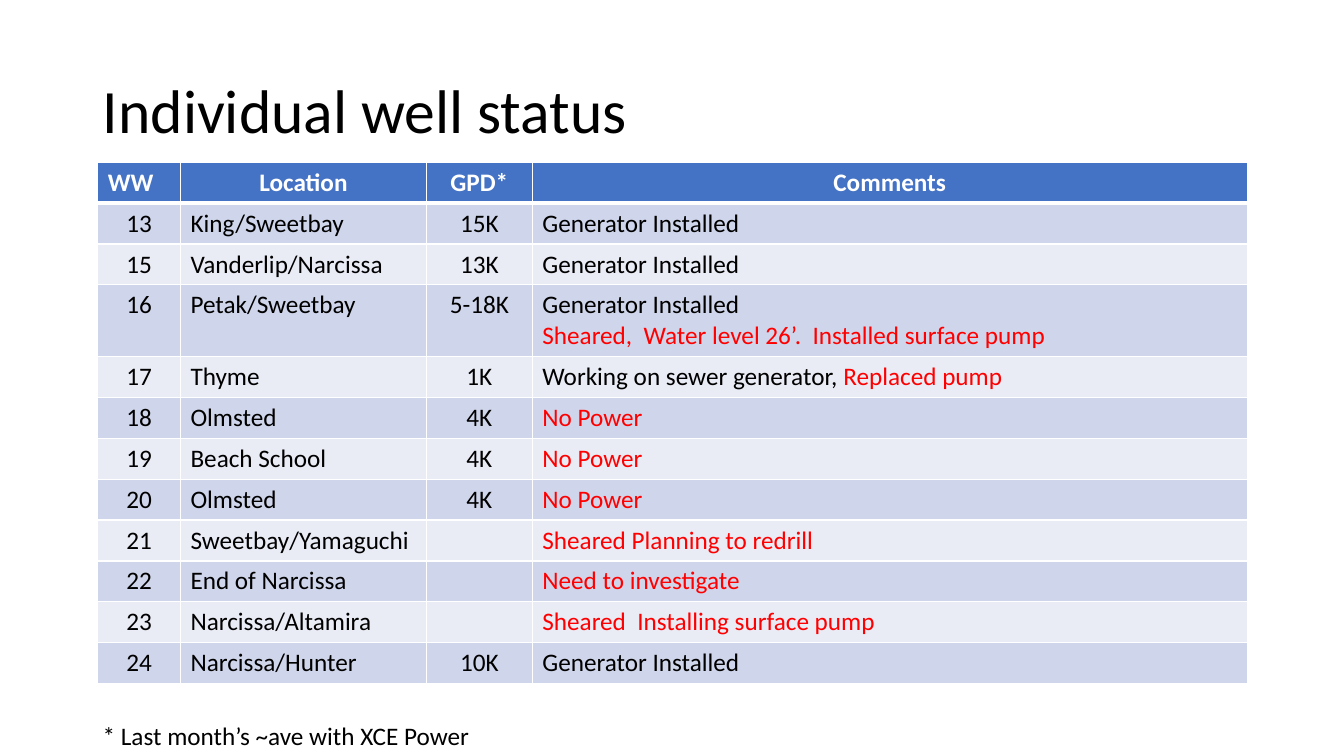
from dataclasses import dataclass

from lxml.etree import SubElement
from pptx import Presentation
from pptx.dml.color import RGBColor
from pptx.enum.text import MSO_ANCHOR as Anchor, MSO_AUTO_SIZE as AutoSize, PP_ALIGN as Align
from pptx.oxml.ns import qn
from pptx.slide import Slide
from pptx.table import _Cell as Cell
from pptx.text.text import TextFrame, _Paragraph as Paragraph
from pptx.util import Inches, Pt


@dataclass(frozen=True)
class Theme:
    font: str = "Calibri"
    title_size: int = 44
    body_size: int = 18
    text: str = "000000"
    alert: str = "FF0000"
    header_text: str = "FFFFFF"
    header_fill: str = "4472C4"
    bands: tuple[str, str] = ("CFD5EA", "E9EBF5")
    border: str = "FFFFFF"
    thin: int = 1
    thick: int = 3


@dataclass(frozen=True)
class Span:
    text: str
    color: str


@dataclass(frozen=True)
class Well:
    number: int
    location: str
    gallons: str
    comments: tuple[tuple[Span, ...], ...]


THEME = Theme()


def plain(text: str) -> Span:
    return Span(text, THEME.text)


def alert(text: str) -> Span:
    return Span(text, THEME.alert)


INSTALLED = (plain("Generator Installed"),)
NO_POWER = (alert("No Power"),)
HEADERS = ("WW", "Location", "GPD*", "Comments")
COLUMN_WIDTHS = (0.82, 2.44, 1.05, 7.09)
COLUMN_ALIGNS = (Align.CENTER, Align.LEFT, Align.CENTER, Align.LEFT)
HEADER_ALIGNS = (Align.LEFT, Align.CENTER, Align.CENTER, Align.CENTER)
LINE_HEIGHT = 0.3
CELL_PADDING = 0.1
WELLS = (
    Well(13, "King/Sweetbay", "15K", (INSTALLED,)),
    Well(15, "Vanderlip/Narcissa", "13K", (INSTALLED,)),
    Well(16, "Petak/Sweetbay", "5-18K",
         (INSTALLED, (alert("Sheared,  Water level 26’.  Installed surface pump"),))),
    Well(17, "Thyme", "1K",
         ((plain("Working on sewer generator, "), alert("Replaced pump")),)),
    Well(18, "Olmsted", "4K", (NO_POWER,)),
    Well(19, "Beach School", "4K", (NO_POWER,)),
    Well(20, "Olmsted", "4K", (NO_POWER,)),
    Well(21, "Sweetbay/Yamaguchi", "", ((alert("Sheared Planning to redrill"),),)),
    Well(22, "End of Narcissa", "", ((alert("Need to investigate"),),)),
    Well(23, "Narcissa/Altamira", "", ((alert("Sheared  Installing surface pump"),),)),
    Well(24, "Narcissa/Hunter", "10K", (INSTALLED,)),
)


def add_span(paragraph: Paragraph, span: Span, size: int, bold: bool = False) -> None:
    run = paragraph.add_run()
    run.text = span.text
    for name, value in {"name": THEME.font, "size": Pt(size), "bold": bold}.items():
        setattr(run.font, name, value)
    run.font.color.rgb = RGBColor.from_string(span.color)


def write_lines(frame: TextFrame, lines: tuple[tuple[Span, ...], ...], align: Align,
                bold: bool = False) -> None:
    for index, spans in enumerate(lines):
        paragraph = frame.add_paragraph() if index else frame.paragraphs[0]
        paragraph.alignment = align
        for span in spans:
            if span.text:
                add_span(paragraph, span, THEME.body_size, bold)


def style_cell(cell: Cell, fill: str, top: int, bottom: int) -> None:
    properties = cell._tc.get_or_add_tcPr()
    for side, width in {"L": THEME.thin, "R": THEME.thin, "T": top, "B": bottom}.items():
        line = SubElement(properties, qn(f"a:ln{side}"), w=str(Pt(width)))
        SubElement(SubElement(line, qn("a:solidFill")), qn("a:srgbClr"), val=THEME.border)
    cell.fill.solid()
    cell.fill.fore_color.rgb = RGBColor.from_string(fill)


def add_title(slide: Slide) -> None:
    title = slide.shapes.title
    place = {"left": 0.92, "top": 0.4, "width": 11.5, "height": 1.45}
    for name, value in place.items():
        setattr(title, name, Inches(value))
    frame = title.text_frame
    for name, value in {"vertical_anchor": Anchor.MIDDLE, "word_wrap": True,
                        "auto_size": AutoSize.NONE}.items():
        setattr(frame, name, value)
    paragraph = frame.paragraphs[0]
    for name, value in {"alignment": Align.LEFT, "line_spacing": 0.9}.items():
        setattr(paragraph, name, value)
    add_span(paragraph, plain("Individual well status"), THEME.title_size)


def add_well_table(slide: Slide) -> None:
    heights = [LINE_HEIGHT + CELL_PADDING]
    heights += [LINE_HEIGHT * len(well.comments) + CELL_PADDING for well in WELLS]
    table = slide.shapes.add_table(
        len(heights), len(HEADERS), Inches(0.97), Inches(1.61),
        Inches(sum(COLUMN_WIDTHS)), Inches(sum(heights))).table
    for column, width in zip(table.columns, COLUMN_WIDTHS):
        column.width = Inches(width)
    for row, height in zip(table.rows, heights):
        row.height = Inches(height)
    for column, header in enumerate(HEADERS):
        cell = table.cell(0, column)
        style_cell(cell, THEME.header_fill, THEME.thin, THEME.thick)
        write_lines(cell.text_frame, ((Span(header, THEME.header_text),),),
                    HEADER_ALIGNS[column], True)
    for index, well in enumerate(WELLS):
        labels = (str(well.number), well.location, well.gallons)
        contents = [((plain(label),),) for label in labels] + [well.comments]
        for column, lines in enumerate(contents):
            cell = table.cell(index + 1, column)
            top = THEME.thin if index else THEME.thick
            style_cell(cell, THEME.bands[index % 2], top, THEME.thin)
            write_lines(cell.text_frame, lines, COLUMN_ALIGNS[column])


def add_footnote(slide: Slide) -> None:
    box = slide.shapes.add_textbox(Inches(0.92), Inches(7.1), Inches(3.87), Inches(0.4))
    frame = box.text_frame
    for name, value in {"word_wrap": False, "auto_size": AutoSize.SHAPE_TO_FIT_TEXT}.items():
        setattr(frame, name, value)
    write_lines(frame, ((plain("* Last month’s ~ave with XCE Power"),),), Align.LEFT)


def main() -> None:
    """Build the well status slide and save it."""
    presentation = Presentation()
    presentation.slide_width = Inches(13.33)
    presentation.slide_height = Inches(7.5)
    slide = presentation.slides.add_slide(presentation.slide_layouts[5])
    add_title(slide)
    add_well_table(slide)
    add_footnote(slide)
    presentation.save("out.pptx")


if __name__ == "__main__":
    main()
